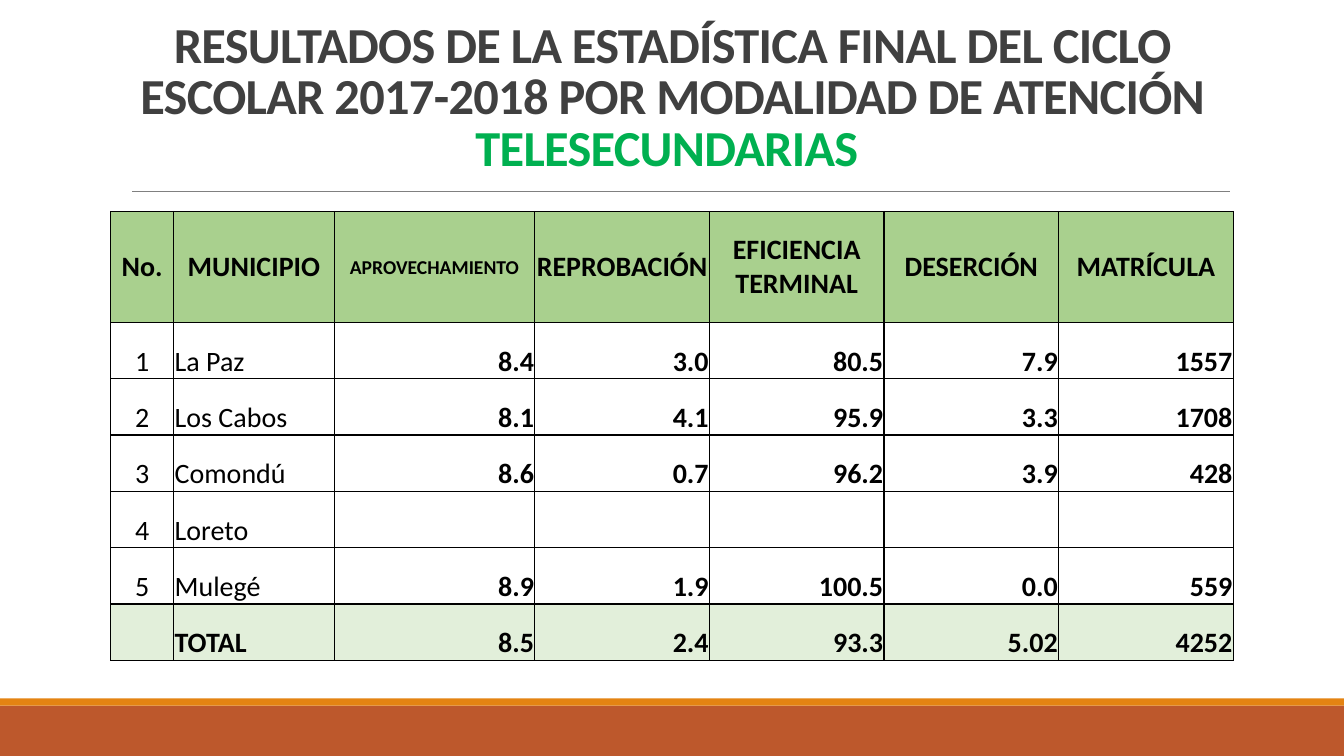
from lxml import etree
from pptx import Presentation
from pptx.dml.color import RGBColor
from pptx.enum import shapes, text
from pptx.oxml import ns
from pptx.util import Cm, Pt

# Content
TITLE = "RESULTADOS DE LA ESTADÍSTICA FINAL DEL CICLO ESCOLAR 2017-2018 POR MODALIDAD DE ATENCIÓN "
SUBJECT = "TELESECUNDARIAS "
HEADERS = ["No.", "MUNICIPIO", "APROVECHAMIENTO", "REPROBACIÓN",
           "EFICIENCIA TERMINAL", "DESERCIÓN", "MATRÍCULA"]
ROWS = [
    ["1", "La Paz", "8.4", "3.0", "80.5", "7.9", "1557"],
    ["2", "Los Cabos", "8.1", "4.1", "95.9", "3.3", "1708"],
    ["3", "Comondú", "8.6", "0.7", "96.2", "3.9", "428"],
    ["4", "Loreto", "", "", "", "", ""],
    ["5", "Mulegé", "8.9", "1.9", "100.5", "0.0", "559"],
    ["", "TOTAL", "8.5", "2.4", "93.3", "5.02", "4252"],
]

# Format
FONT = "Calibri"
BLACK = RGBColor(0, 0, 0)
DARK = RGBColor(0x40, 0x40, 0x40)
GRAY = RGBColor(0x80, 0x80, 0x80)
GREEN = RGBColor(0x00, 0xB0, 0x50)
HEADER_GREEN = RGBColor(0xA9, 0xD0, 0x8E)
TOTAL_GREEN = RGBColor(0xE2, 0xEF, 0xDA)
RUST = RGBColor(0xBD, 0x58, 0x2C)
ORANGE = RGBColor(0xE4, 0x83, 0x12)
LEFT, CENTER, RIGHT = text.PP_ALIGN.LEFT, text.PP_ALIGN.CENTER, text.PP_ALIGN.RIGHT

# Sizes in centimetres
WIDTH, HEIGHT = 33.87, 19.05
COLUMN_WIDTHS = [1.59, 4.04, 5.06] + [4.4] * 4
ROW_HEIGHTS = [2.79] + [1.42] * len(ROWS)
CELL_MARGIN = 0.02


def add_text(para, words, size=20, color=BLACK, bold=False, align=LEFT, spacing=None):
    para.alignment = align
    span = para.add_run()
    span.text = words
    font = span.font
    font.name, font.size, font.bold = FONT, Pt(size), bold
    font.color.rgb = color
    if spacing is not None:
        span._r.get_or_add_rPr().set("spc", str(round(spacing * 100)))


def add_band(page, top, height, color):
    band = page.shapes.add_shape(shapes.MSO_SHAPE.RECTANGLE, 0, Cm(top), Cm(WIDTH), Cm(height))
    band.shadow.inherit = False
    band.fill.solid()
    band.fill.fore_color.rgb = color
    band.line.fill.background()


def add_borders(cell):
    properties = cell._tc.get_or_add_tcPr()
    for side in ("a:lnL", "a:lnR", "a:lnT", "a:lnB"):
        line = etree.SubElement(properties, ns.qn(side), w=str(Pt(1)))
        fill = etree.SubElement(line, ns.qn("a:solidFill"))
        etree.SubElement(fill, ns.qn("a:srgbClr"), val=str(BLACK))


def fill_cell(cell, words, row, column):
    header, total = row == 0, row == len(ROWS)
    cell.margin_left = cell.margin_right = cell.margin_top = Cm(CELL_MARGIN)
    cell.margin_bottom = 0
    cell.vertical_anchor = text.MSO_ANCHOR.MIDDLE if header else text.MSO_ANCHOR.BOTTOM
    add_borders(cell)
    if header or total:
        cell.fill.solid()
        cell.fill.fore_color.rgb = HEADER_GREEN if header else TOTAL_GREEN
    else:
        cell.fill.background()
    if words:
        align = CENTER if header or column == 0 else LEFT if column == 1 else RIGHT
        add_text(cell.text_frame.paragraphs[0], words, align=align,
                 size=14 if header and column == 2 else 20,
                 bold=header or total or column > 1)


def main():
    deck = Presentation()
    deck.slide_width, deck.slide_height = Cm(WIDTH), Cm(HEIGHT)
    page = deck.slides.add_slide(deck.slide_layouts[6])

    # Bands at the foot and rule under the title
    add_band(page, 17.78, 1.27, RUST)
    add_band(page, 17.6, 0.18, ORANGE)
    rule = page.shapes.add_connector(shapes.MSO_CONNECTOR.STRAIGHT,
                                     Cm(3.33), Cm(4.83), Cm(31), Cm(4.83))
    rule.line.color.rgb = GRAY
    rule.line.width = Pt(0.5)
    etree.SubElement(rule._element.spPr, ns.qn("a:effectLst"))

    # Title
    box = page.shapes.add_textbox(Cm(2.97), Cm(0.53), Cm(27.94), Cm(4.04))
    frame = box.text_frame
    frame.word_wrap = True
    frame.vertical_anchor = text.MSO_ANCHOR.BOTTOM
    para = frame.paragraphs[0]
    para.line_spacing = 0.85
    for words, color in ((TITLE, DARK), (SUBJECT, GREEN)):
        add_text(para, words, size=36, color=color, bold=True, align=CENTER, spacing=-0.5)

    # Results table
    table = page.shapes.add_table(len(ROW_HEIGHTS), len(COLUMN_WIDTHS), Cm(2.79), Cm(5.33),
                                  Cm(sum(COLUMN_WIDTHS)), Cm(sum(ROW_HEIGHTS))).table
    table.horz_banding = False
    for column, width in zip(table.columns, COLUMN_WIDTHS):
        column.width = Cm(width)
    for row, height in zip(table.rows, ROW_HEIGHTS):
        row.height = Cm(height)
    for r, values in enumerate([HEADERS] + ROWS):
        for c, words in enumerate(values):
            fill_cell(table.cell(r, c), words, r, c)

    deck.save("out.pptx")


if __name__ == "__main__":
    main()
